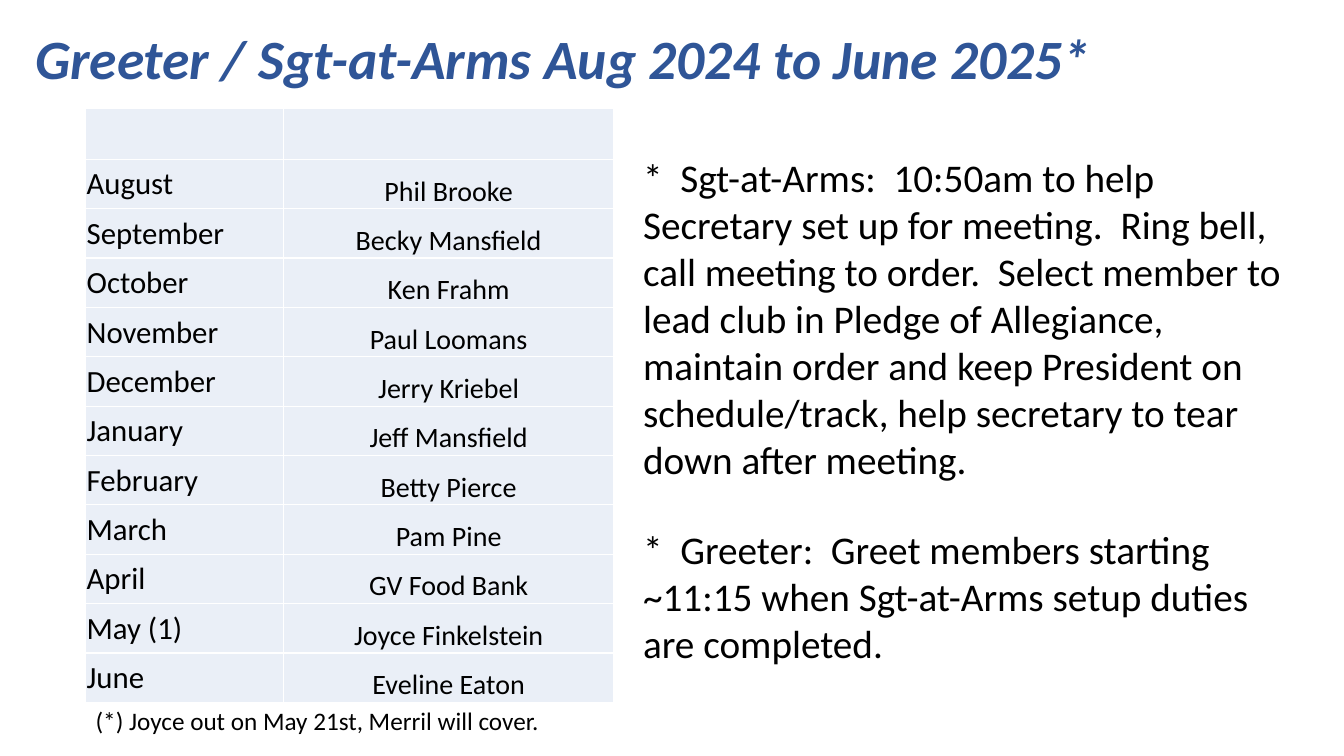
"""Builds the greeter and sergeant-at-arms schedule slide."""
from lxml import etree
from pptx import Presentation
from pptx.dml.color import RGBColor
from pptx.enum.text import MSO_ANCHOR, PP_ALIGN
from pptx.oxml.ns import qn
from pptx.util import Inches, Pt

LEFT, CENTER = PP_ALIGN.LEFT, PP_ALIGN.CENTER
TOP, MIDDLE, BOTTOM = MSO_ANCHOR.TOP, MSO_ANCHOR.MIDDLE, MSO_ANCHOR.BOTTOM

FONT = "Calibri"
COLORS = {"title": "2F5597", "text": "000000", "cell": "EAEFF7", "border": "FFFFFF"}

TITLE = "Greeter / Sgt-at-Arms Aug 2024 to June 2025*"
SCHEDULE = [
    ("", ""),
    ("August", "Phil Brooke"),
    ("September", "Becky Mansfield"),
    ("October", "Ken Frahm"),
    ("November", "Paul Loomans"),
    ("December", "Jerry Kriebel"),
    ("January", "Jeff Mansfield"),
    ("February", "Betty Pierce"),
    ("March", "Pam Pine"),
    ("April", "GV Food Bank"),
    ("May (1)", "Joyce Finkelstein"),
    ("June", "Eveline Eaton"),
]
NOTES = [
    ("*  Sgt-at-Arms:  10:50am to help Secretary set up for meeting.  Ring bell, "
     "call meeting to order.  Select member to lead club in Pledge of Allegiance, "
     "maintain order and keep President on schedule/track, help secretary to tear "
     "down after meeting.", (6.28, 1.47, 6.68, 3.4), 28),
    ("*  Greeter:  Greet members starting ~11:15 when Sgt-at-Arms setup duties "
     "are completed.", (6.28, 5.16, 6.68, 1.51), 28),
    ("(*) Joyce out on May 21st, Merril will cover.", (0.85, 6.95, 6.68, 0.4), 18),
]
TABLE_LEFT, TABLE_TOP = 0.85, 1.08
HEADER_HEIGHT, ROW_HEIGHT = 0.5, 0.49
COLUMNS = [(1.96, 22, LEFT, MIDDLE), (3.28, 20, CENTER, BOTTOM)]


def write(frame, text, size, color="text", align=LEFT):
    para = frame.paragraphs[0]
    para.text = text
    para.alignment = align
    para.font.name = FONT
    para.font.size = Pt(size)
    para.font.color.rgb = RGBColor.from_string(COLORS[color])
    return para


def add_text(page, text, place, size, color="text", anchor=TOP):
    box = page.shapes.add_textbox(*map(Inches, place))
    box.text_frame.word_wrap = True
    box.text_frame.vertical_anchor = anchor
    return write(box.text_frame, text, size, color)


def add_borders(cell):
    properties = cell._tc.get_or_add_tcPr()
    for side in ("a:lnL", "a:lnR", "a:lnT", "a:lnB"):
        line = etree.SubElement(properties, qn(side), w=str(Pt(1)))
        fill = etree.SubElement(line, qn("a:solidFill"))
        etree.SubElement(fill, qn("a:srgbClr"), val=COLORS["border"])


def add_schedule(page):
    width = sum(column[0] for column in COLUMNS)
    height = HEADER_HEIGHT + ROW_HEIGHT * (len(SCHEDULE) - 1)
    table = page.shapes.add_table(
        len(SCHEDULE), len(COLUMNS), Inches(TABLE_LEFT), Inches(TABLE_TOP),
        Inches(width), Inches(height)).table
    table.first_row = table.horz_banding = False
    for column, (column_width, *_) in zip(table.columns, COLUMNS):
        column.width = Inches(column_width)
    for index, (row, texts) in enumerate(zip(table.rows, SCHEDULE)):
        row.height = Inches(ROW_HEIGHT if index else HEADER_HEIGHT)
        for cell, text, (_, size, align, anchor) in zip(row.cells, texts, COLUMNS):
            add_borders(cell)
            cell.fill.solid()
            cell.fill.fore_color.rgb = RGBColor.from_string(COLORS["cell"])
            cell.margin_left = cell.margin_right = cell.margin_top = Inches(0.01)
            cell.margin_bottom = 0
            cell.vertical_anchor = anchor
            write(cell.text_frame, text, size, align=align)


def main():
    deck = Presentation()
    deck.slide_width, deck.slide_height = Inches(13.33), Inches(7.5)
    page = deck.slides.add_slide(deck.slide_layouts[6])
    title = add_text(page, TITLE, (0.25, 0.15, 11.5, 0.93), 39.6, "title", MIDDLE)
    title.line_spacing = 0.9
    title.font.bold = title.font.italic = True
    add_schedule(page)
    for text, place, size in NOTES:
        add_text(page, text, place, size)
    deck.save("out.pptx")


if __name__ == "__main__":
    main()
